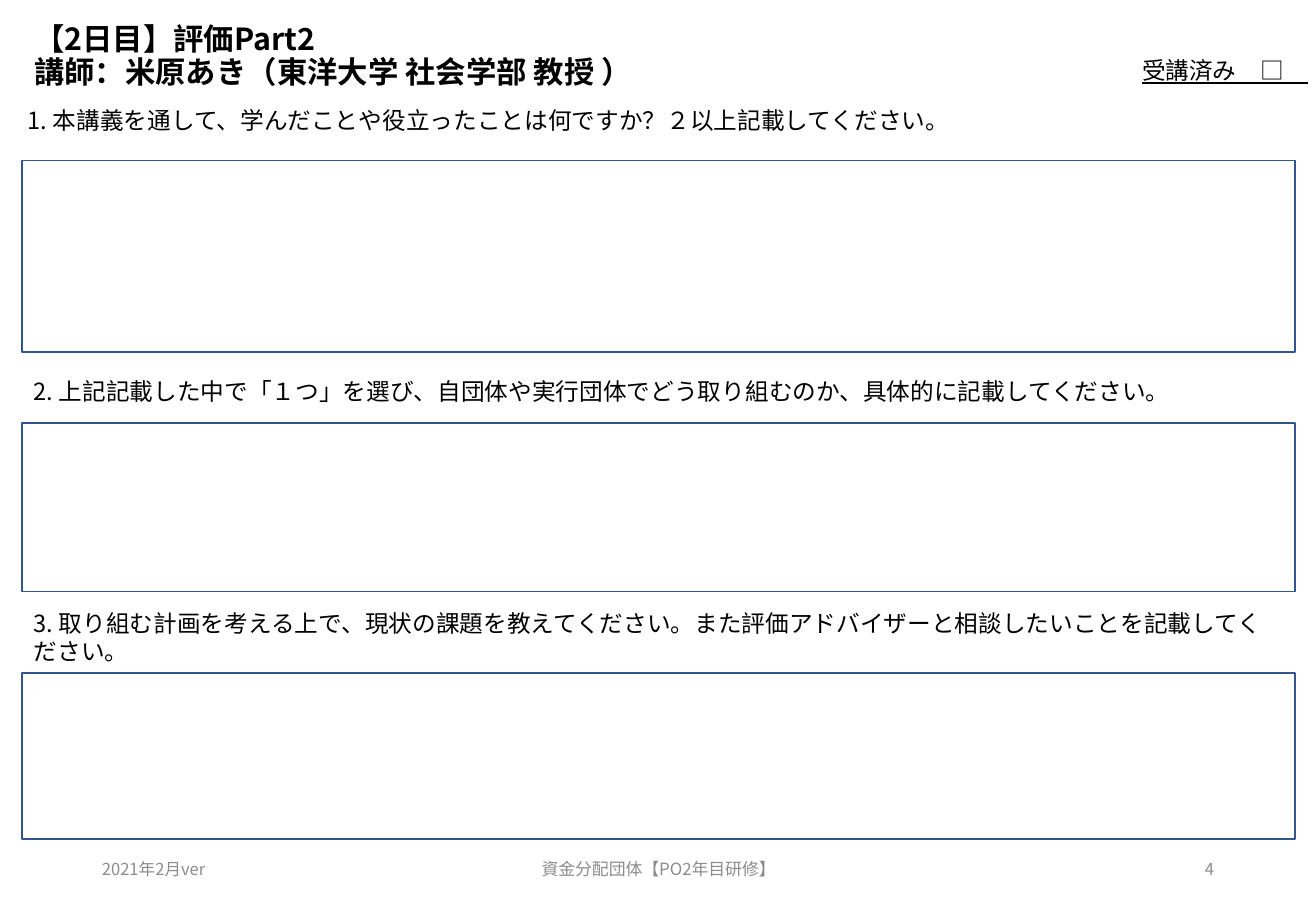
from lxml import etree
from pptx import Presentation
from pptx.dml.color import RGBColor
from pptx.enum.shapes import MSO_SHAPE
from pptx.enum.text import MSO_ANCHOR, MSO_AUTO_SIZE, PP_ALIGN
from pptx.oxml.ns import qn
from pptx.util import Pt

PX = 9144
SLIDE_W, SLIDE_H = 1083, 750
FONT = "Noto Sans CJK JP"
BLACK, GREY, WHITE, BLUE = "000000", "8C8C8C", "FFFFFF", "325491"
RECTANGLE = MSO_SHAPE.RECTANGLE
TOP, MIDDLE = MSO_ANCHOR.TOP, MSO_ANCHOR.MIDDLE
NO_FIT = MSO_AUTO_SIZE.NONE
LEFT, CENTER, RIGHT = PP_ALIGN.LEFT, PP_ALIGN.CENTER, PP_ALIGN.RIGHT
TITLE_ONLY = 5

TITLE = ["【2日目】評価Part2", "講師：米原あき（東洋大学 社会学部 教授 ）"]
ATTENDED = "受講済み　□　"
QUESTIONS = [
    ("1. 本講義を通して、学んだことや役立ったことは何ですか？２以上記載してください。",
     (13, 82, 1039, 57), (18, 132, 1048, 158)),
    ("2. 上記記載した中で「１つ」を選び、自団体や実行団体でどう取り組むのか、具体的に記載してください。",
     (18, 305, 1039, 34), (18, 348, 1048, 139)),
    ("3. 取り組む計画を考える上で、現状の課題を教えてください。また評価アドバイザーと相談したいことを記載してください。",
     (18, 496, 1039, 57), (18, 554, 1048, 137)),
]
FOOTER = [
    ("2021年2月ver", 0, 244, LEFT, 9.8),
    ("資金分配団体【PO2年目研修】", 285, 366, CENTER, 10),
    ("4", 691, 244, RIGHT, 9.8),
]


def emu(box):
    return [length * PX for length in box]


def color(hex_code):
    return RGBColor.from_string(hex_code)


def apply(target, values):
    for name, value in values.items():
        setattr(target, name, value)


def write(frame, lines, size, ink=BLACK, anchor=TOP, align=LEFT, spacing=1.0, **style):
    apply(frame, {"word_wrap": True, "auto_size": NO_FIT, "vertical_anchor": anchor,
                  "margin_left": 10 * PX, "margin_right": 10 * PX,
                  "margin_top": 5 * PX, "margin_bottom": 5 * PX})
    frame.text = "\n".join(lines)
    for paragraph in frame.paragraphs:
        apply(paragraph, {"alignment": align, "line_spacing": spacing,
                          "space_before": Pt(0)})
        for run in paragraph.runs:
            apply(run.font, {"name": FONT, "size": Pt(size), **style})
            run.font.color.rgb = color(ink)
            east_asian = etree.SubElement(run.font._element, qn("a:ea"))
            east_asian.set("typeface", FONT)


def add_label(slide, box, text, size, **style):
    frame = slide.shapes.add_textbox(*emu(box)).text_frame
    write(frame, [text], size, **style)
    return frame


def add_header(slide, box):
    left, top, width, height = box
    title = slide.shapes.title
    apply(title, dict(zip(("left", "top", "width", "height"),
                          emu((left, top, 900, height)))))
    write(title.text_frame, TITLE, 18, anchor=MIDDLE, spacing=0.9, bold=True)
    attended_left = left + 912
    attended = add_label(slide, (attended_left, top + 26, left + width - attended_left, 34),
                         ATTENDED, 14, underline=True)
    attended.margin_right = 0


def add_question(slide, box, question, answer_box):
    answer = slide.shapes.add_shape(RECTANGLE, *emu(answer_box))
    answer.shadow.inherit = False
    answer.fill.solid()
    answer.fill.fore_color.rgb = color(WHITE)
    answer.line.color.rgb = color(BLUE)
    answer.line.width = Pt(1)
    add_label(slide, box, question, 14)


def add_footer(slide, box):
    left, top, _, height = box
    for text, offset, width, align, size in FOOTER:
        add_label(slide, (left + offset, top, width, height), text, size,
                  ink=GREY, anchor=MIDDLE, align=align)


def main():
    deck = Presentation()
    deck.slide_width, deck.slide_height = emu((SLIDE_W, SLIDE_H))
    slide = deck.slides.add_slide(deck.slide_layouts[TITLE_ONLY])
    add_header(slide, (18, 15, SLIDE_W - 18, 64))
    for question, box, answer_box in QUESTIONS:
        add_question(slide, box, question, answer_box)
    add_footer(slide, (74, 695, 935, 40))
    deck.save("out.pptx")


if __name__ == "__main__":
    main()
